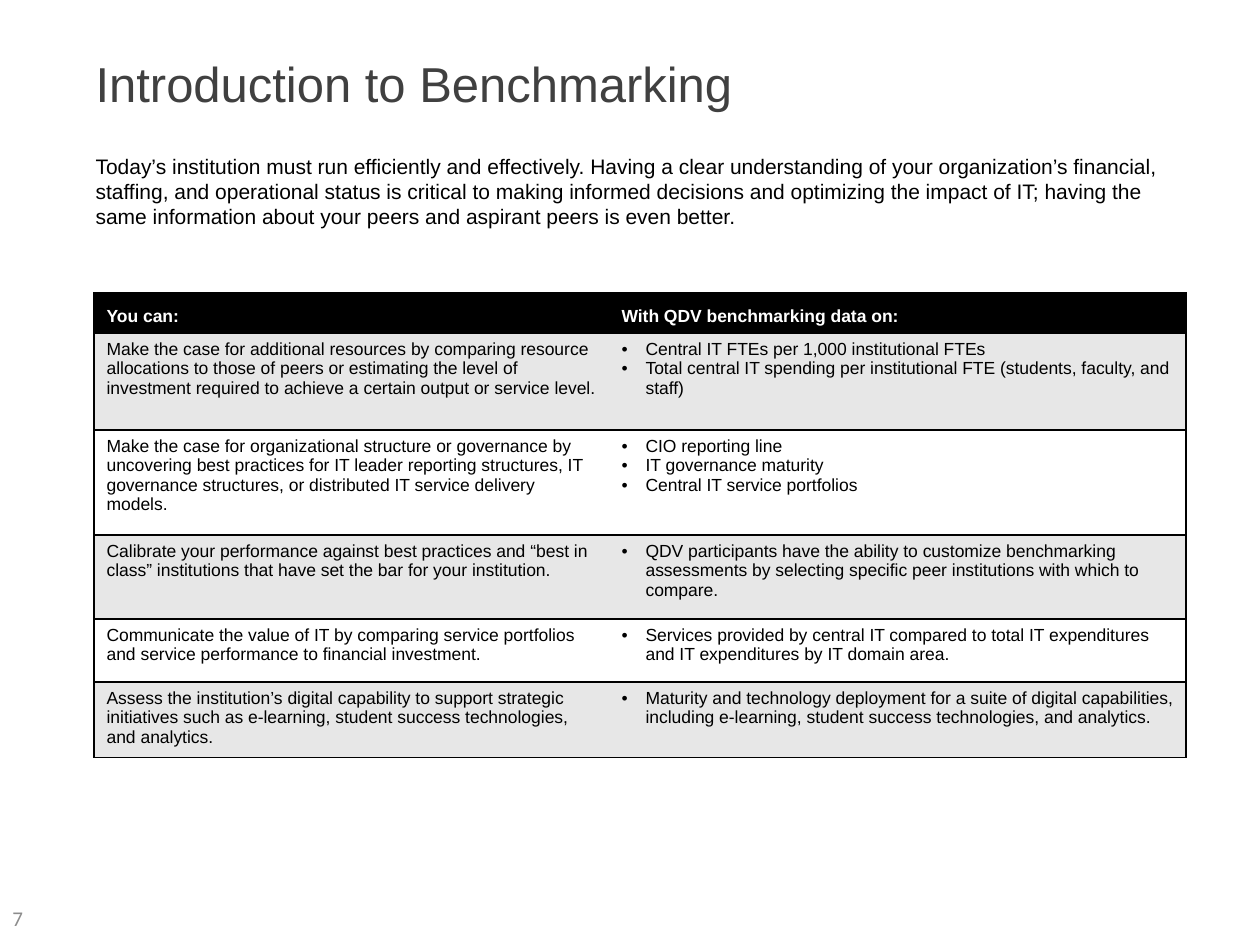
"""Build the benchmarking slide with its intro text and two-column table."""
import dataclasses
import typing

import lxml.etree
import pptx
import pptx.dml.color
import pptx.enum.text
import pptx.oxml.ns
import pptx.util

SCALE = 914400 / 126
FONT = "Arial"
HUES = {"black": "000000", "white": "FFFFFF", "band": "E7E7E7", "title": "404040", "page": "8C8C8C"}
ANCHOR = pptx.enum.text.MSO_ANCHOR
COLS = (515, 577)
INDENT = 24


@dataclasses.dataclass
class Row:
    height: int
    left: str
    right: list[str]
    fill: str


ROWS = [
    Row(40, "You can:", ["With QDV benchmarking data on:"], "black"),
    Row(97, "Make the case for additional resources by comparing resource allocations to those of peers "
        "or estimating the level of investment required to achieve a certain output or service level.",
        ["Central IT FTEs per 1,000 institutional FTEs",
         "Total central IT spending per institutional FTE (students, faculty, and staff)"], "band"),
    Row(105, "Make the case for organizational structure or governance by uncovering best practices for "
        "IT leader reporting structures, IT governance structures, or distributed IT service delivery models.",
        ["CIO reporting line", "IT governance maturity", "Central IT service portfolios"], "white"),
    Row(84, "Calibrate your performance against best practices and “best in class” institutions that have "
        "set the bar for your institution.",
        ["QDV participants have the ability to customize benchmarking assessments by selecting specific "
         "peer institutions with which to compare."], "band"),
    Row(63, "Communicate the value of IT by comparing service portfolios and service performance to "
        "financial investment.",
        ["Services provided by central IT compared to total IT expenditures and IT expenditures by "
         "IT domain area."], "white"),
    Row(63, "Assess the institution’s digital capability to support strategic initiatives such as "
        "e-learning, student success technologies, and analytics.",
        ["Maturity and technology deployment for a suite of digital capabilities, including e-learning, "
         "student success technologies, and analytics."], "band"),
]


def px(count: int) -> int:
    return round(count * SCALE)


def place(shape: typing.Any, left: int, top: int, width: int, height: int) -> None:
    shape.left, shape.top, shape.width, shape.height = map(px, (left, top, width, height))


def tag(base: typing.Any, name: str, **attrs: str) -> typing.Any:
    return lxml.etree.SubElement(base, pptx.oxml.ns.qn(name), attrs)


def write(frame: typing.Any, *lines: str, size: int, hue: str = "black", font: str = FONT,
          bold: bool = False, bullet: bool = False, before: int = 0,
          anchor: typing.Any = ANCHOR.TOP) -> None:
    frame.word_wrap = True
    frame.vertical_anchor = anchor
    for spot, line in enumerate(lines):
        para = frame.paragraphs[0] if spot == 0 else frame.add_paragraph()
        para.alignment = pptx.enum.text.PP_ALIGN.LEFT
        para.space_before = pptx.util.Pt(before)
        run = para.add_run()
        run.text = line
        run.font.name = font
        run.font.size = pptx.util.Pt(size)
        run.font.bold = bold
        run.font.color.rgb = pptx.dml.color.RGBColor.from_string(HUES[hue])
        props = para._p.get_or_add_pPr()
        indent = px(INDENT) if bullet else 0
        props.set("marL", str(indent))
        props.set("indent", str(-indent))
        if bullet:
            tag(props, "a:buFont", typeface=FONT)
            tag(props, "a:buChar", char="•")
        else:
            tag(props, "a:buNone")


def border(cell: typing.Any, inner: str) -> None:
    props = cell._tc.get_or_add_tcPr()
    for side in "LRTB":
        line = tag(props, f"a:ln{side}", w=str(pptx.util.Pt(1)))
        if side == inner:
            tag(line, "a:noFill")
        else:
            tag(tag(line, "a:solidFill"), "a:srgbClr", val=HUES["black"])


def draw(slide: typing.Any) -> None:
    frame = slide.shapes.add_table(len(ROWS), len(COLS), px(94), px(293), px(sum(COLS)),
                                   px(sum(row.height for row in ROWS)))
    table = frame.table
    for col, width in zip(table.columns, COLS):
        col.width = px(width)
    for spot, row in enumerate(ROWS):
        table.rows[spot].height = px(row.height)
        head = spot == 0
        for side, lines in enumerate(([row.left], row.right)):
            cell = table.cell(spot, side)
            border(cell, "RL"[side])
            cell.fill.solid()
            cell.fill.fore_color.rgb = pptx.dml.color.RGBColor.from_string(HUES[row.fill])
            write(cell.text_frame, *lines, size=10, hue="white" if head else "black",
                  bold=head, bullet=side == 1 and not head)
            cell.vertical_anchor = ANCHOR.BOTTOM if head else ANCHOR.TOP


def main() -> None:
    deck = pptx.Presentation()
    deck.slide_width, deck.slide_height = px(1260), px(945)
    slide = deck.slides.add_slide(deck.slide_layouts[1])
    title, body = slide.placeholders
    place(title, 83, 47, 1105, 101)
    write(title.text_frame, "Introduction to Benchmarking", size=28, hue="title")
    place(body, 83, 147, 1114, 514)
    write(body.text_frame,
          "Today’s institution must run efficiently and effectively. Having a clear understanding of your "
          "organization’s financial, staffing, and operational status is critical to making informed "
          "decisions and optimizing the impact of IT; having the same information about your peers and "
          "aspirant peers is even better.", size=12, before=1)
    for shape in (title, body):
        shape.text_frame.auto_size = pptx.enum.text.MSO_AUTO_SIZE.NONE
    page = slide.shapes.add_textbox(0, px(892), px(136), px(53))
    write(page.text_frame, "7", size=12, hue="page", font="Calibri", anchor=ANCHOR.MIDDLE)
    draw(slide)
    deck.save("out.pptx")


if __name__ == "__main__":
    main()
